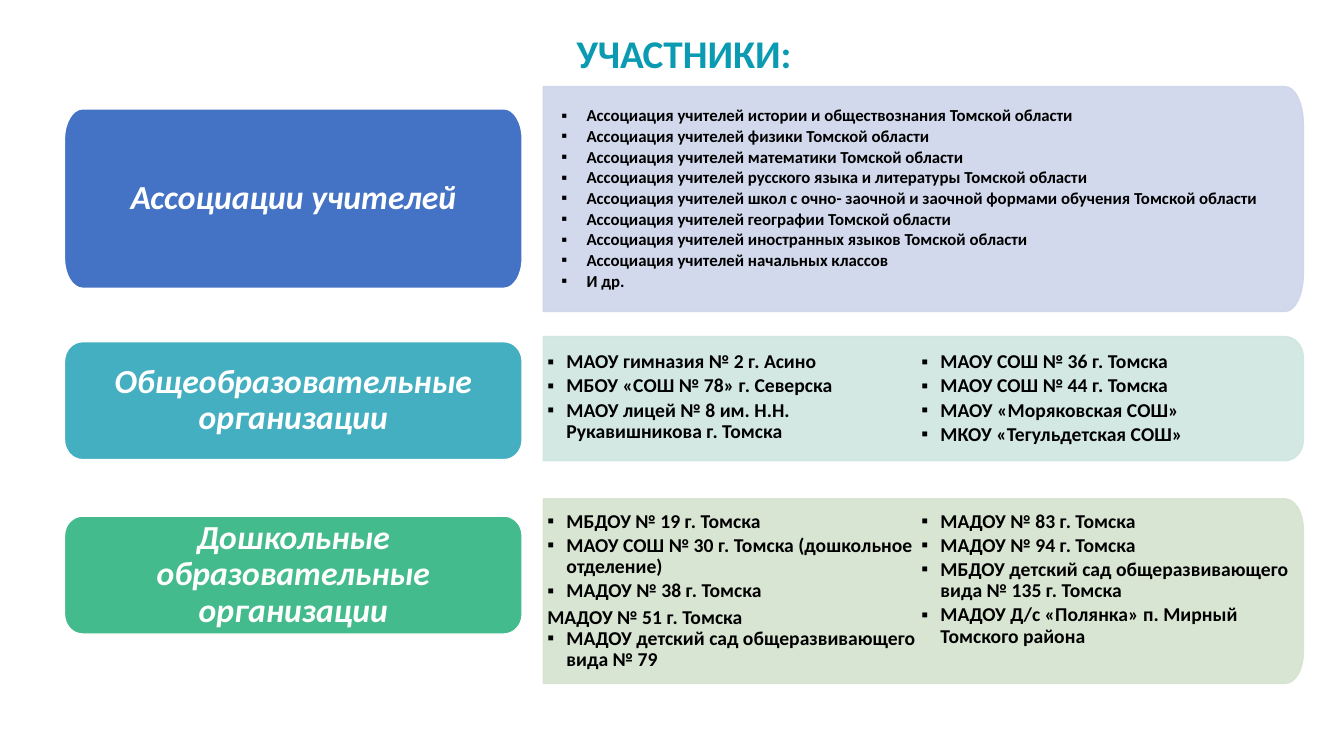
from dataclasses import dataclass

from lxml import etree
from pptx import Presentation
from pptx import util as u
from pptx.dml import color
from pptx.enum import text
from pptx.oxml import ns

FONT = "Calibri"
COLORS = {
    "title": "0A9BB2", "white": "FFFFFF", "black": "000000",
    "blue": "4472C4", "blue_light": "CFD5EA",
    "teal": "43AFC0", "teal_light": "CFE6E0",
    "green": "43BB8D", "green_light": "D5E3CF",
}
LABEL_LEFT, LABEL_WIDTH = 0.64, 4.54
PANEL_LEFT, PANEL_WIDTH = 5.39, 7.54
CORNER_WIDTH = 0.18
CURVE_PULL = 0.55
LABEL_INSETS = (0.16, 0.11, 0.16, 0.11)
WIDE_INSETS = (0.18, 0.13, 0.22, 0.13)
NARROW_INSETS = (0.04, 0.06, 0.08, 0.06)


@dataclass
class Group:
    label: str
    color: str
    label_top: float
    label_height: float
    panel_top: float
    panel_height: float
    members: list[str]
    size: int = 14
    indent: float = 0.19
    insets: tuple = NARROW_INSETS
    columns: int = 2
    unbulleted: str = ""


GROUPS = [
    Group("Ассоциации учителей", "blue", 1.08, 1.78, 0.86, 2.23, [
        "Ассоциация учителей истории и обществознания Томской области",
        "Ассоциация учителей физики Томской области",
        "Ассоциация учителей математики Томской области",
        "Ассоциация учителей русского языка и литературы Томской области",
        "Ассоциация учителей школ с очно- заочной и заочной формами обучения Томской области",
        "Ассоциация учителей географии Томской области",
        "Ассоциация учителей иностранных языков Томской области",
        "Ассоциация учителей начальных классов",
        "И др.",
    ], size=12, indent=0.25, insets=WIDE_INSETS, columns=1),
    Group("Общеобразовательные организации", "teal", 3.39, 1.17, 3.34, 1.23, [
        "МАОУ гимназия № 2 г. Асино",
        "МБОУ «СОШ № 78» г. Северска",
        "МАОУ лицей № 8 им. Н.Н. Рукавишникова г. Томска",
        "МАОУ СОШ № 36 г. Томска",
        "МАОУ СОШ № 44 г. Томска",
        "МАОУ «Моряковская СОШ»",
        "МКОУ «Тегульдетская СОШ»",
    ]),
    Group("Дошкольные образовательные организации", "green", 5.12, 1.17, 4.95, 1.83, [
        "МБДОУ № 19 г. Томска",
        "МАОУ СОШ № 30 г. Томска (дошкольное отделение)",
        "МАДОУ № 38 г. Томска",
        "МАДОУ № 51 г. Томска",
        "МАДОУ детский сад общеразвивающего вида № 79",
        "МАДОУ № 83 г. Томска",
        "МАДОУ № 94 г. Томска",
        "МБДОУ детский сад общеразвивающего вида № 135 г. Томска",
        "МАДОУ Д/с «Полянка» п. Мирный Томского района",
    ], unbulleted="МАДОУ № 51 г. Томска"),
]


def rgb(name: str):
    return color.RGBColor.from_string(COLORS[name])


def add_element(parent, tag: str, **attributes: str):
    return etree.SubElement(parent, ns.qn(tag), attributes)


def write(paragraph, content: str, *, size: int, ink: str, italic: bool = False,
          centered: bool = False, line_spacing: float | None = 0.9,
          after: int = 0, indent: float = 0) -> None:
    if line_spacing:
        paragraph.line_spacing = line_spacing
    properties = paragraph._p.get_or_add_pPr()
    if after:
        spacing = add_element(properties, "a:spcAft")
        add_element(spacing, "a:spcPct", val=str(after * 1000))
    if indent:
        paragraph.level = 1
        properties.set("marL", str(u.Inches(indent)))
        properties.set("indent", str(-u.Inches(indent)))
        add_element(properties, "a:buFont", typeface="Arial")
        add_element(properties, "a:buChar", char="▪")
    paragraph.alignment = text.PP_ALIGN.CENTER if centered else text.PP_ALIGN.LEFT
    span = paragraph.add_run()
    span.text = content
    span.font.name = FONT
    span.font.size = u.Pt(size)
    span.font.bold = True
    span.font.italic = italic
    span.font.color.rgb = rgb(ink)


def prepare_frame(box, insets: tuple):
    frame = box.text_frame
    frame.word_wrap = True
    frame.vertical_anchor = text.MSO_ANCHOR.MIDDLE
    (frame.margin_left, frame.margin_top,
     frame.margin_right, frame.margin_bottom) = map(u.Inches, insets)
    return frame


def outline(left: float, top: float, width: float, height: float, rounded: int) -> list:
    right, bottom = left + width, top + height
    points = []
    corners = ((right, top, -1, 1), (right, bottom, -1, -1),
               (left, bottom, 1, -1), (left, top, 1, 1))
    for index, (x, y, inward_x, inward_y) in enumerate(corners):
        if index >= rounded:
            points.append((x, y))
            continue
        reach_x, reach_y = inward_x * CORNER_WIDTH, inward_y * height / 6
        rest = 1 - CURVE_PULL
        curve = [(x + reach_x, y), (x + rest * reach_x, y),
                 (x, y + rest * reach_y), (x, y + reach_y)]
        points += curve if index % 2 == 0 else reversed(curve)
    return [(u.Inches(x), u.Inches(y)) for x, y in points]


def bend_corners(box, rounded: int) -> None:
    lines = list(box._element.spPr.iter(ns.qn("a:lnTo")))
    for corner in range(rounded):
        pulls = lines[4 * corner:4 * corner + 3]
        curve = etree.Element(ns.qn("a:cubicBezTo"))
        pulls[0].addprevious(curve)
        for pull in pulls:
            curve.append(pull[0])
            pull.getparent().remove(pull)


def add_rounded(page, bounds: tuple, *, fill: str, line: str, rounded: int = 4,
                opacity: int = 100):
    first, *others = outline(*bounds, rounded)
    builder = page.shapes.build_freeform(*first)
    builder.add_line_segments(others, close=True)
    box = builder.convert_to_shape()
    bend_corners(box, rounded)
    box.shadow.inherit = False
    box.fill.solid()
    box.fill.fore_color.rgb = rgb(fill)
    box.line.color.rgb = rgb(line)
    box.line.width = u.Pt(1)
    if opacity < 100:
        for tint in box._element.spPr.iter(ns.qn("a:srgbClr")):
            add_element(tint, "a:alpha", val=str(opacity * 1000))
    return box


def add_group(page, group: Group) -> None:
    light = group.color + "_light"
    panel = add_rounded(page, (PANEL_LEFT, group.panel_top, PANEL_WIDTH, group.panel_height),
                        fill=light, line=light, rounded=2, opacity=90)
    frame = prepare_frame(panel, group.insets)
    if group.columns > 1:
        frame._txBody.bodyPr.set("numCol", str(group.columns))
    for index, member in enumerate(group.members):
        paragraph = frame.add_paragraph() if index else frame.paragraphs[0]
        if member == group.unbulleted:
            write(paragraph, member, size=group.size, ink="black", line_spacing=None)
        else:
            write(paragraph, member, size=group.size, ink="black", after=15, indent=group.indent)

    label = add_rounded(page, (LABEL_LEFT, group.label_top, LABEL_WIDTH, group.label_height),
                        fill=group.color, line="white")
    frame = prepare_frame(label, LABEL_INSETS)
    write(frame.paragraphs[0], group.label, size=24, ink="white",
          italic=True, centered=True, after=35)


def main() -> None:
    deck = Presentation()
    deck.slide_width, deck.slide_height = u.Inches(40 / 3), u.Inches(7.5)
    page = deck.slides.add_slide(deck.slide_layouts[6])
    title = page.shapes.add_textbox(*map(u.Inches, (0.64, 0.25, 12.29, 0.6)))
    frame = prepare_frame(title, (0.1, 0.05, 0.1, 0.05))
    write(frame.paragraphs[0], "УЧАСТНИКИ:", size=28, ink="title", centered=True)
    for group in GROUPS:
        add_group(page, group)
    deck.save("out.pptx")


if __name__ == "__main__":
    main()
